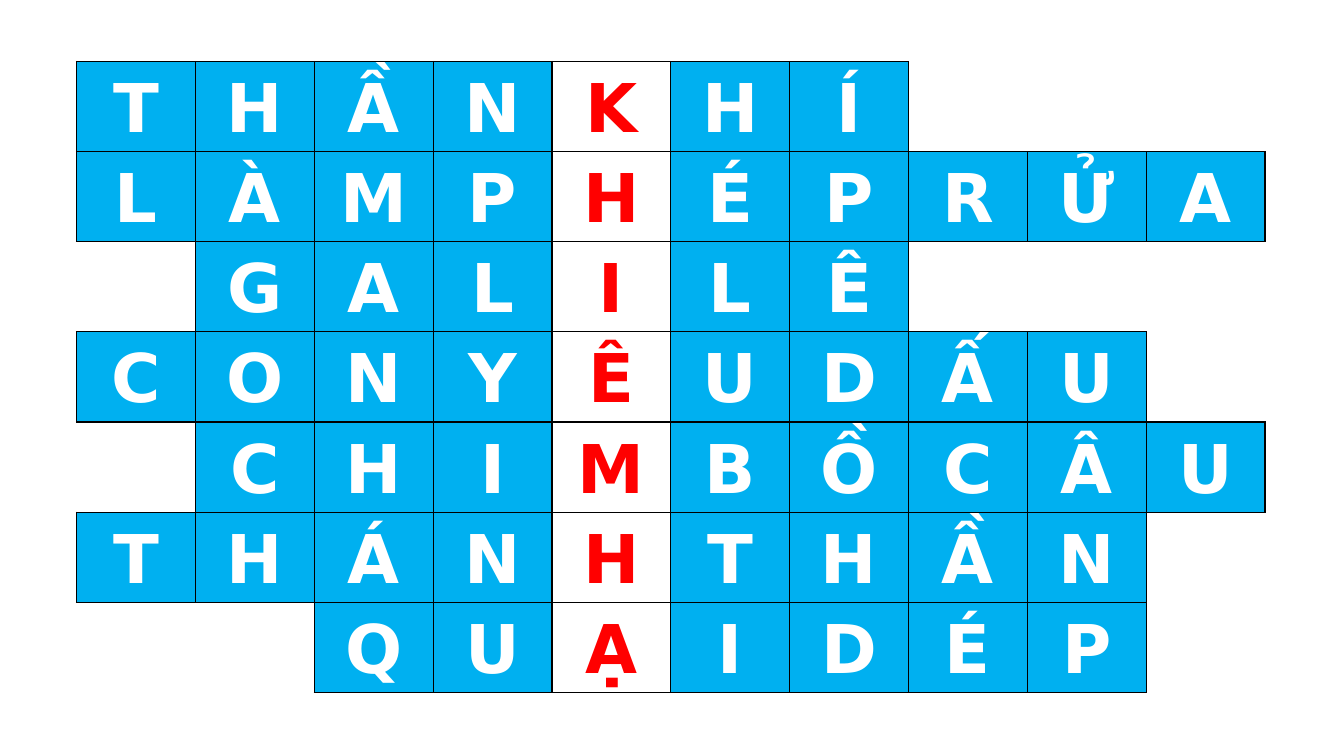
from lxml.etree import SubElement
from pptx import Presentation
from pptx.dml.color import RGBColor
from pptx.enum.text import MSO_ANCHOR as Anchor, PP_ALIGN as Align
from pptx.oxml.ns import qn
from pptx.util import Cm, Pt

ANSWERS = [
    "THẦNKHÍ   ",
    "LÀMPHÉPRỬA",
    " GALILÊ   ",
    "CONYÊUDẤU ",
    " CHIMBỒCÂU",
    "THÁNHTHẦN ",
    "  QUẠIDÉP ",
]
KEY_COLUMN = 4
# Edge tag with the row and column step to the neighbouring cell
EDGES = [("a:lnL", 0, -1), ("a:lnR", 0, 1), ("a:lnT", -1, 0), ("a:lnB", 1, 0)]


def color(hex_value):
    return RGBColor.from_string(hex_value)


def has_letter(row, column):
    return (0 <= row < len(ANSWERS) and 0 <= column < len(ANSWERS[row])
            and ANSWERS[row][column] != " ")


class CrosswordSlide:
    FONT = "DejaVu Sans"
    TILE, LETTER = "00B0F0", "FFFFFF"
    KEY_TILE, KEY_LETTER = "FFFFFF", "FF0000"
    BORDER = "000000"

    def __init__(self, deck):
        self.slide = deck.slides.add_slide(deck.slide_layouts[6])

    def grid(self, left, top, width, height):
        rows, columns = len(ANSWERS), len(ANSWERS[0])
        grid = self.slide.shapes.add_table(
            rows, columns, Cm(left), Cm(top), Cm(width), Cm(height)).table
        grid.first_row = grid.horz_banding = False
        for row, answer in enumerate(ANSWERS):
            for column, letter in enumerate(answer):
                cell = grid.cell(row, column)
                self.borders(cell, row, column)
                if has_letter(row, column):
                    self.letter(cell, letter, column == KEY_COLUMN)
                else:
                    cell.fill.background()

    def borders(self, cell, row, column):
        """Draw each edge that touches a lettered cell and hide the others."""
        properties = cell._tc.get_or_add_tcPr()
        for tag, down, right in EDGES:
            edge = SubElement(properties, qn(tag), w=str(Pt(1)))
            if has_letter(row, column) or has_letter(row + down, column + right):
                paint = SubElement(edge, qn("a:solidFill"))
                SubElement(paint, qn("a:srgbClr"), val=self.BORDER)
            else:
                SubElement(edge, qn("a:noFill"))

    def letter(self, cell, letter, is_key):
        cell.fill.solid()
        cell.fill.fore_color.rgb = color(self.KEY_TILE if is_key else self.TILE)
        cell.vertical_anchor = Anchor.MIDDLE
        cell.margin_left = cell.margin_right = Cm(0.19)
        cell.margin_top = cell.margin_bottom = 0
        cell.text = letter
        paragraph = cell.text_frame.paragraphs[0]
        paragraph.alignment = Align.CENTER
        paragraph.line_spacing = 1.07
        paragraph.space_after = Pt(8)
        font = paragraph.font
        font.name, font.size, font.bold = self.FONT, Pt(48), True
        font.color.rgb = color(self.KEY_LETTER if is_key else self.LETTER)


def main():
    deck = Presentation()
    deck.slide_width, deck.slide_height = Cm(33.87), Cm(19.05)
    CrosswordSlide(deck).grid(1.93, 1.55, 29.95, 15.9)
    deck.save("out.pptx")


if __name__ == "__main__":
    main()
